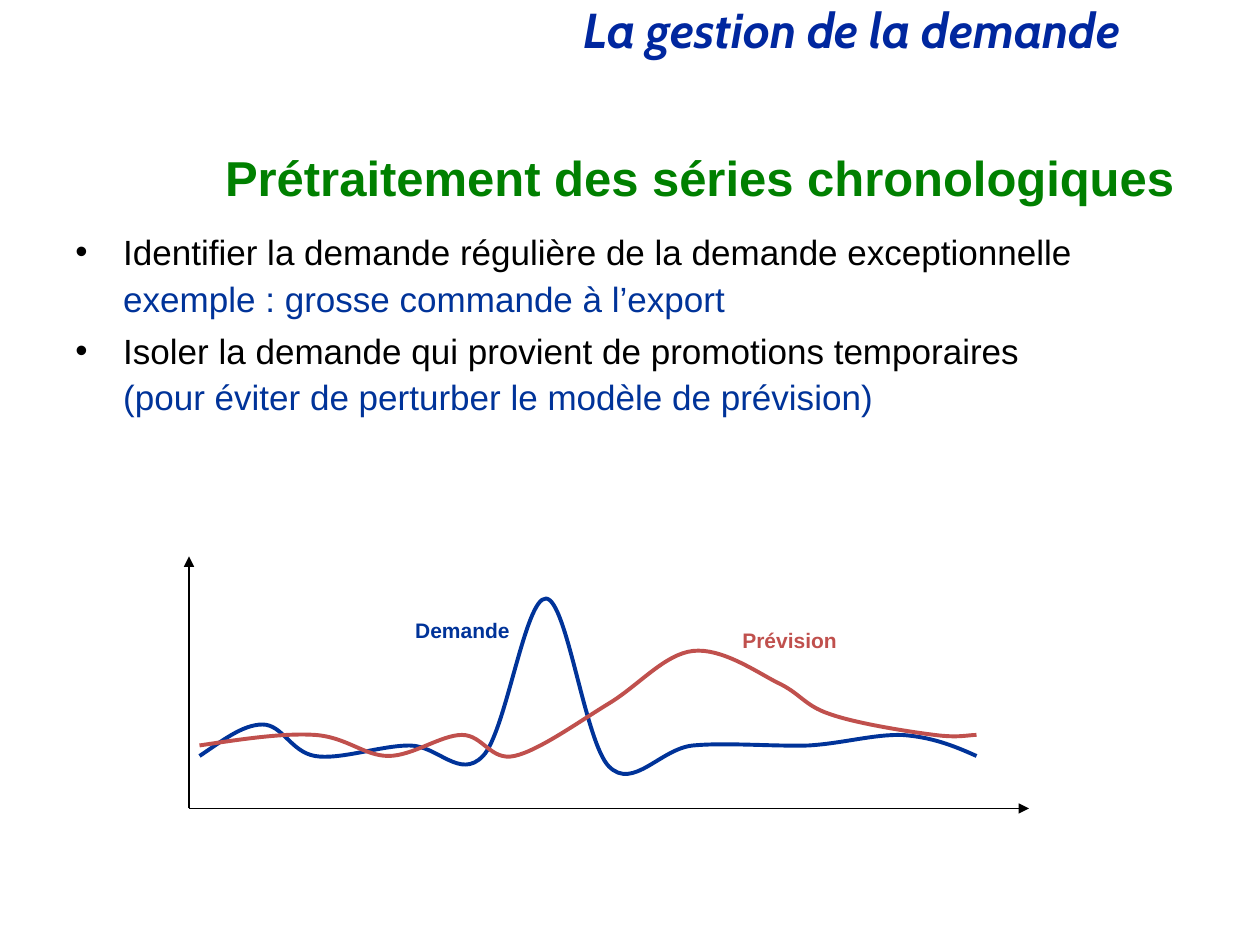
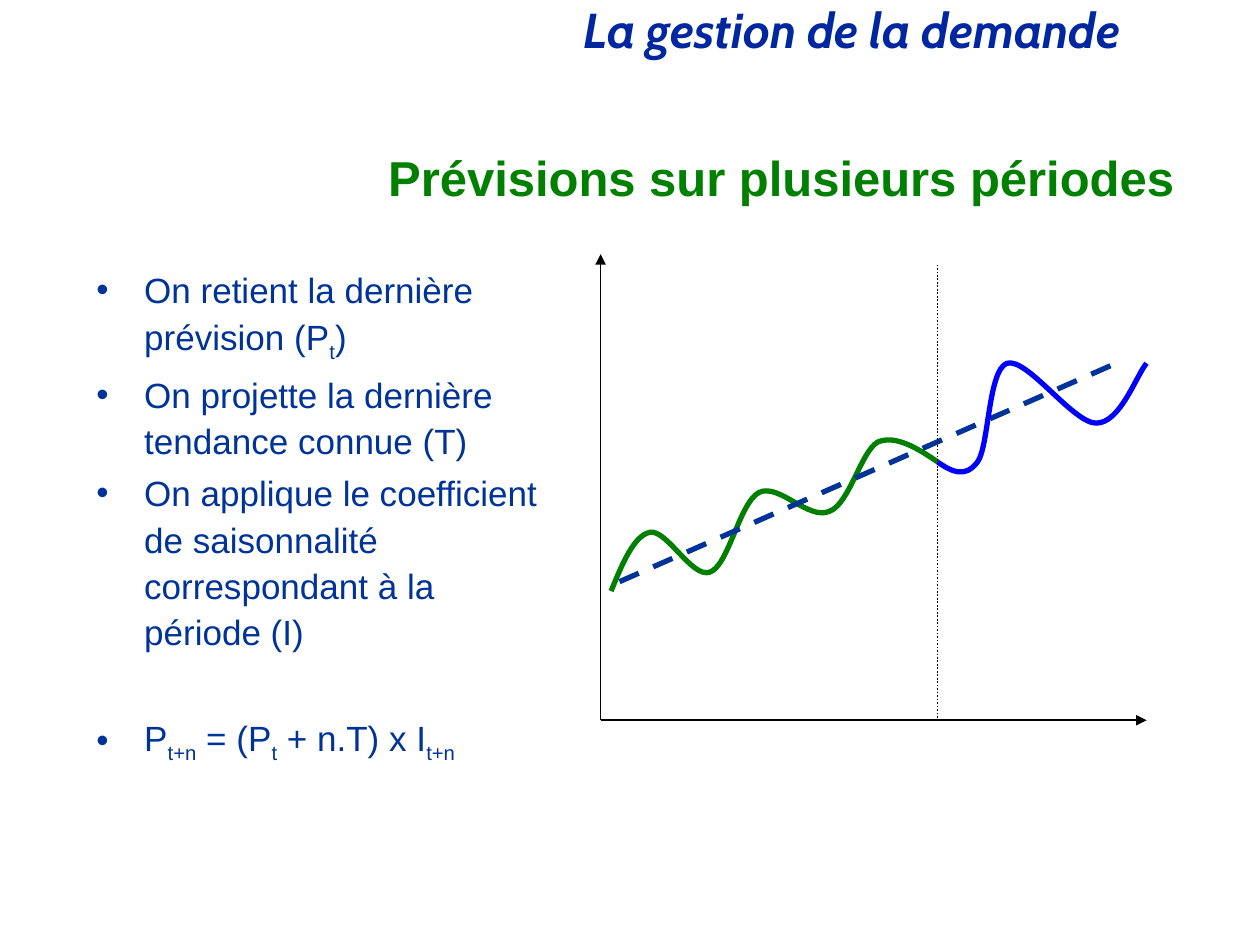
"""Build two slides on demand management, laid out on a 120 by 90 grid."""
from dataclasses import dataclass

from lxml import etree
from pptx import Presentation
from pptx import util as u
from pptx.dml.color import RGBColor
from pptx.enum import dml, shapes, text
from pptx.oxml import ns

COLS, ROWS = 120, 90
WIDTH, HEIGHT = u.Inches(10), u.Inches(7.5)
BLACK, NAVY, GREEN = "000000", "003399", "008000"
RED, BLUE, HEADER_BLUE = "C0504D", "0000FF", "00279F"
Point = tuple[float, float]


@dataclass
class Style:
    size: float
    color: str
    bold: bool = False
    italic: bool = False
    font: str = "Arial"
    align: text.PP_ALIGN = text.PP_ALIGN.LEFT
    anchor: text.MSO_ANCHOR = text.MSO_ANCHOR.TOP
    spacing: float = 1.0
    before: float = 0
    bullet: bool = False


@dataclass
class Run:
    text: str
    color: str = ""
    sub: bool = False
    new_line: bool = False


@dataclass
class Para:
    runs: list[Run]
    before: float | None = None


@dataclass
class Box:
    col: float
    row: float
    cols: float
    rows: float


@dataclass
class Line:
    start: Point
    end: Point
    color: str = BLACK
    weight: float = 1
    dash: dml.MSO_LINE | None = None
    arrow: bool = False


@dataclass
class Curve:
    color: str
    weight: float
    points: list[Point]


HEADER = Style(28, HEADER_BLUE, bold=True, italic=True, font="Cabin", spacing=0.9)
TITLE = Style(28, GREEN, bold=True, align=text.PP_ALIGN.RIGHT)
BODY = Style(20, BLACK, spacing=1.1, before=3.5, bullet=True)
BODY_MIDDLE = Style(20, NAVY, spacing=1.1, before=3.5, bullet=True,
                    anchor=text.MSO_ANCHOR.MIDDLE)

DEMAND = Curve(NAVY, 2.25, [
    (19, 72), (21.1, 70.6), (23.1, 69), (25, 69),
    (26.9, 69), (27.7, 71.6), (30, 72), (32.3, 72.4), (36.3, 71), (39, 71),
    (41.7, 71), (43.8, 74.3), (46, 72), (48.2, 69.7), (50, 56.9), (52, 57),
    (54, 57.1), (55.7, 70.7), (58, 73), (60.3, 75.3), (62.9, 71.3), (66, 71),
    (69.1, 70.7), (73.7, 71.1), (77, 71), (80.3, 70.8), (83.3, 69.9), (86, 70),
    (88.7, 70.2), (90.8, 71), (93, 72)])
FORECAST = Curve(RED, 2.25, [
    (19, 71), (23, 70.4), (27, 69.8), (30, 70),
    (33, 70.2), (34.7, 72), (37, 72), (39.3, 72), (42, 70), (44, 70),
    (46, 70), (46.7, 72.5), (49, 72), (51.3, 71.5), (55.2, 68.7), (58, 67),
    (60.8, 65.3), (63.3, 62.3), (66, 62), (68.7, 61.7), (71.9, 63.9), (74, 65),
    (76.2, 66), (76.6, 67.2), (79, 68), (81.5, 68.9), (86.6, 69.7), (89, 70),
    (91.3, 70.3), (92.2, 70), (93, 70)])
PAST_SEASONS = Curve(GREEN, 3, [
    (58.2, 56.3), (59.3, 53.6), (60.4, 51), (61.9, 50.7),
    (63.5, 50.4), (65.9, 55.1), (67.6, 54.5), (69.4, 53.9), (70.4, 47.9), (72.3, 46.9),
    (74.2, 46), (77, 49.6), (79, 48.7), (80.9, 48), (82, 43), (83.6, 42.1),
    (85.3, 41.4), (87.4, 42.7), (89.3, 44)])
NEXT_SEASONS = Curve(BLUE, 3, [
    (89.3, 44), (90.6, 44.9), (91.9, 45.6), (93.1, 44),
    (94.2, 42.5), (94.1, 35.3), (95.9, 34.6), (97.8, 34), (102.2, 40.3), (104.4, 40.3),
    (106.7, 40.3), (108.2, 35.8), (109.2, 34.6)])


def rgb(color: str) -> RGBColor:
    """Turn a hex string into a colour."""
    return RGBColor.from_string(color)


def x(col: float) -> int:
    """Return the distance of a column from the left edge."""
    return round(WIDTH * col / COLS)


def y(row: float) -> int:
    """Return the distance of a row from the top edge."""
    return round(HEIGHT * row / ROWS)


def add_bullet(p) -> None:
    """Give a paragraph a hanging round bullet."""
    pPr = p._p.get_or_add_pPr()
    pPr.set("marL", str(u.Inches(0.38)))
    pPr.set("indent", str(-u.Inches(0.38)))
    etree.SubElement(pPr, ns.qn("a:buFont")).set("typeface", "Arial")
    etree.SubElement(pPr, ns.qn("a:buChar")).set("char", "•")


def add_run(p, run: Run, style: Style) -> None:
    """Append one formatted run to a paragraph."""
    if run.new_line:
        p.add_line_break()
    r = p.add_run()
    r.text = run.text
    formats = {"size": u.Pt(style.size), "bold": style.bold,
               "italic": style.italic, "name": style.font}
    for key, value in formats.items():
        setattr(r.font, key, value)
    r.font.color.rgb = rgb(run.color or style.color)
    if run.sub:
        r._r.get_or_add_rPr().set("baseline", "-25000")


def add_text(s, box: Box, paras: list[Para], style: Style, wrap: bool = True) -> None:
    """Draw a text box with its paragraphs."""
    sp = s.shapes.add_textbox(x(box.col), y(box.row), x(box.cols), y(box.rows))
    tf = sp.text_frame
    tf.word_wrap = wrap
    tf.vertical_anchor = style.anchor
    for i, para in enumerate(paras):
        p = tf.add_paragraph() if i else tf.paragraphs[0]
        before = style.before if para.before is None else para.before
        formats = {"alignment": style.align, "line_spacing": style.spacing,
                   "space_before": u.Pt(before)}
        for key, value in formats.items():
            setattr(p, key, value)
        if style.bullet:
            add_bullet(p)
        for run in para.runs:
            add_run(p, run, style)


def add_line(s, line: Line) -> None:
    """Draw a straight line, with an arrowhead if asked."""
    sp = s.shapes.add_connector(shapes.MSO_CONNECTOR.STRAIGHT,
                                x(line.start[0]), y(line.start[1]),
                                x(line.end[0]), y(line.end[1]))
    sp.line.color.rgb = rgb(line.color)
    sp.line.width = u.Pt(line.weight)
    if line.dash:
        sp.line.dash_style = line.dash
    spPr = sp._element.spPr
    if line.arrow:
        ln = spPr.find(ns.qn("a:ln"))
        etree.SubElement(ln, ns.qn("a:tailEnd")).set("type", "triangle")
    etree.SubElement(spPr, ns.qn("a:effectLst"))


def add_curve(s, curve: Curve) -> None:
    """Draw an open Bézier curve from its control points."""
    start, *rest = [(x(col), y(row)) for col, row in curve.points]
    builder = s.shapes.build_freeform(*start)
    builder.add_line_segments(rest, close=False)
    sp = builder.convert_to_shape()
    sp.shadow.inherit = False
    sp.fill.background()
    sp.line.color.rgb = rgb(curve.color)
    sp.line.width = u.Pt(curve.weight)
    outline = next(sp._element.iter(ns.qn("a:path")))
    segments = outline.findall(ns.qn("a:lnTo"))
    for i in range(0, len(segments), 3):
        bezier = etree.SubElement(outline, ns.qn("a:cubicBezTo"))
        for segment in segments[i:i + 3]:
            bezier.append(segment[0])
            outline.remove(segment)


def add_axes(s, origin: Point, top: float, right: float) -> None:
    """Draw the two arrows of a graph from its origin."""
    for end in ((origin[0], top), (right, origin[1])):
        add_line(s, Line(origin, end, arrow=True))


def add_slide(prs, title: str):
    """Add a blank slide with the common header and its title."""
    s = prs.slides.add_slide(prs.slide_layouts[6])
    add_text(s, Box(54.4, 0, 62.9, 6.4), [Para([Run("La gestion de la demande")])], HEADER)
    add_text(s, Box(18, 13.5, 95, 6), [Para([Run(title)])], TITLE)
    return s


def build_preprocessing(prs) -> None:
    """Build the slide on cleaning time series."""
    s = add_slide(prs, "Prétraitement des séries chronologiques")
    pairs = [("Identifier la demande régulière de la demande exceptionnelle",
              "exemple : grosse commande à l’export"),
             ("Isoler la demande qui provient de promotions temporaires",
              "(pour éviter de perturber le modèle de prévision)")]
    add_text(s, Box(6, 21, 108, 29.2),
             [Para([Run(rule), Run(detail, NAVY, new_line=True)]) for rule, detail in pairs],
             BODY)
    for curve in (DEMAND, FORECAST):
        add_curve(s, curve)
    add_axes(s, (18, 77), 53, 98)
    labels = [("Demande", NAVY, Box(38.3, 58.2, 11.5, 3.6)),
              ("Prévision", RED, Box(69.5, 59.2, 11.4, 3.4))]
    for label, color, box in labels:
        style = Style(12, color, bold=True, align=text.PP_ALIGN.CENTER)
        add_text(s, box, [Para([Run(label)])], style, wrap=False)


def build_periods(prs) -> None:
    """Build the slide on forecasts over several periods."""
    s = add_slide(prs, "Prévisions sur plusieurs périodes")
    formula = [Run("P"), Run("t+n", sub=True), Run(" = (P"), Run("t", sub=True),
               Run(" + n.T) x I"), Run("t+n", sub=True)]
    add_text(s, Box(8, 22, 46.3, 54), [
        Para([Run("On retient la dernière prévision (P"), Run("t", sub=True), Run(")")]),
        Para([Run("On projette la dernière tendance connue (T)")]),
        Para([Run("On applique le coefficient de saisonnalité correspondant "
                  "à la période (I)")]),
        Para(formula, before=34)], BODY_MIDDLE)
    add_axes(s, (57.2, 68.6), 24.2, 109.2)
    add_curve(s, PAST_SEASONS)
    add_line(s, Line((59, 55.4), (106.3, 34.6), NAVY, 3, dml.MSO_LINE.DASH))
    add_curve(s, NEXT_SEASONS)
    add_line(s, Line((89.3, 25.2), (89.3, 68.6), dash=dml.MSO_LINE.ROUND_DOT))


def main() -> None:
    """Build and save the presentation."""
    prs = Presentation()
    prs.slide_width, prs.slide_height = WIDTH, HEIGHT
    build_preprocessing(prs)
    build_periods(prs)
    prs.save("out.pptx")


if __name__ == "__main__":
    main()
